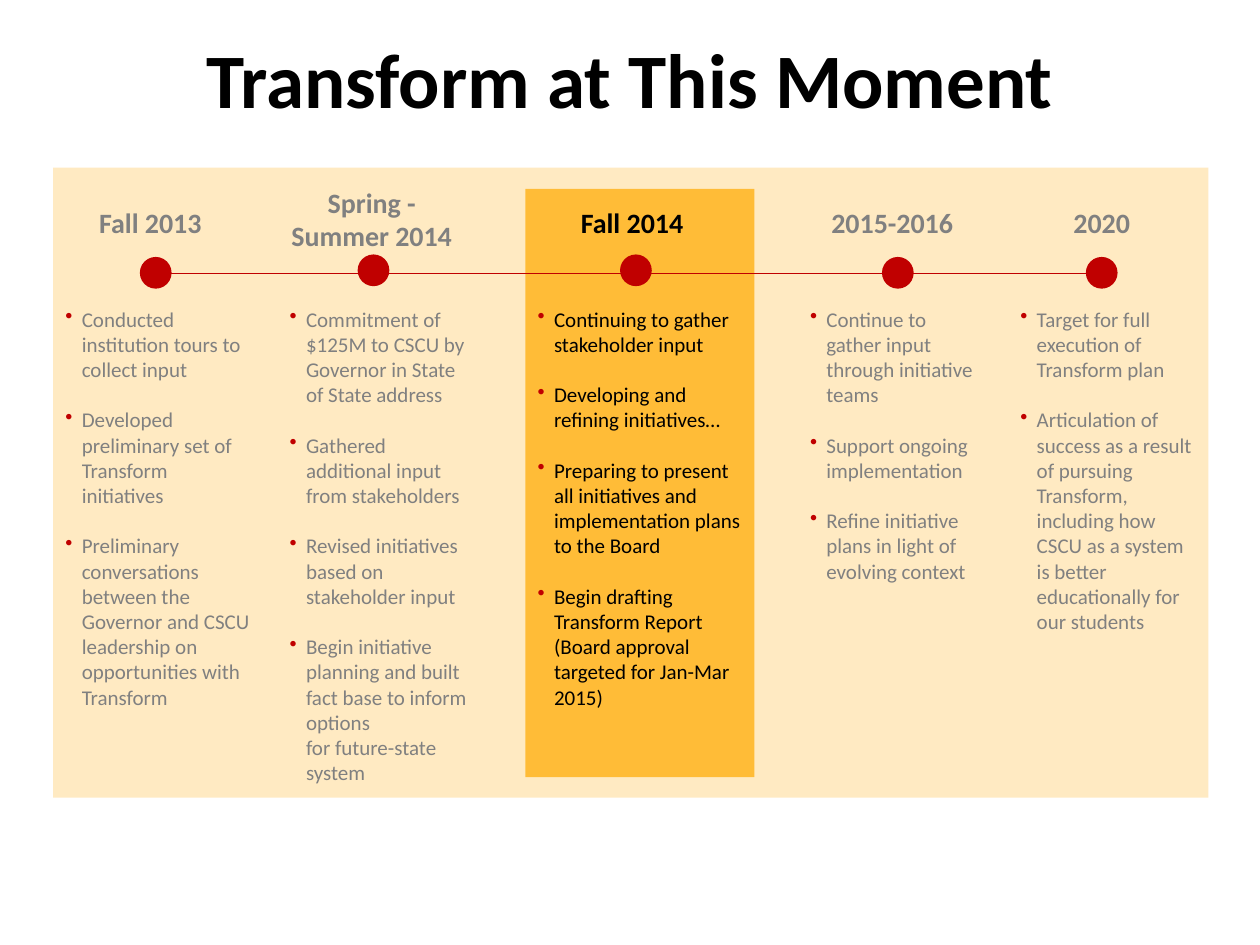
from lxml import etree
from pptx import Presentation
from pptx.dml.color import RGBColor
from pptx.enum import shapes, text
from pptx.oxml import ns
from pptx.util import Cm, Pt

RED, AMBER, GREY, BLACK = "C00000", "FFBC37", "808080", "000000"
LEFT, CENTER = text.PP_ALIGN.LEFT, text.PP_ALIGN.CENTER
HANGING = Cm(0.33)


def add_filled(kind, left, top, width, height, color):
    shape = page.shapes.add_shape(kind, Cm(left), Cm(top), Cm(width), Cm(height))
    shape.shadow.inherit = False
    shape.fill.solid()
    shape.fill.fore_color.rgb = RGBColor.from_string(color)
    shape.line.fill.background()
    return shape


def add_text(left, top, width, height, lines, size, color, bold, align, inset=None):
    box = page.shapes.add_textbox(Cm(left), Cm(top), Cm(width), Cm(height))
    frame = box.text_frame
    frame.word_wrap = True
    if inset is not None:
        frame.margin_left = frame.margin_right = Cm(inset)
        frame.margin_top = frame.margin_bottom = Cm(inset)
    for index, line in enumerate(lines):
        para = frame.add_paragraph() if index else frame.paragraphs[0]
        para.text = line
        para.alignment = align
        for span in para.runs:
            span.font.name = "Calibri"
            span.font.size = Pt(size)
            span.font.bold = bold
            span.font.color.rgb = RGBColor.from_string(color)
    return frame


deck = Presentation()
deck.slide_width, deck.slide_height = Cm(25.4), Cm(19.05)
page = deck.slides.add_slide(deck.slide_layouts[6])

panel = add_filled(shapes.MSO_SHAPE.RECTANGLE, 1.07, 3.38, 23.29, 12.7, AMBER)
panel_color = panel.fill._xPr.find(".//" + ns.qn("a:srgbClr"))
etree.SubElement(panel_color, ns.qn("a:alpha"), val="30000")
add_filled(shapes.MSO_SHAPE.RECTANGLE, 10.59, 3.81, 4.62, 11.86, AMBER)
add_text(0, 0.64, 25.4, 1.88, ["Transform at This Moment"], 44, BLACK, True, CENTER, 0)

timeline = page.shapes.add_connector(
    shapes.MSO_CONNECTOR.STRAIGHT, Cm(2.9), Cm(5.51), Cm(22.28), Cm(5.51))
timeline.line.color.rgb = RGBColor.from_string(RED)
timeline.line.width = Pt(0.75)
etree.SubElement(timeline._element.spPr, ns.qn("a:effectLst"))

# heading, (left, top, width), alignment, (dot left, dot top), (body left, width), color, points
stages = [
    ("Fall 2013", (1.75, 4.01, 2.74), LEFT, (2.82, 5.18), (1.07, 4.24), GREY, [
        "Conducted institution tours to collect input",
        "Developed preliminary set of Transform initiatives",
        "Preliminary conversations between the Governor and CSCU leadership "
        "on opportunities with Transform"]),
    ("Spring - Summer 2014", (5.59, 3.61, 3.81), CENTER, (7.21, 5.13), (5.59, 4.14), GREY, [
        "Commitment of $125M to CSCU by Governor in State of State address",
        "Gathered additional input from stakeholders",
        "Revised initiatives based on stakeholder input",
        "Begin initiative planning and built fact base to inform options\n"
        "for future-state system"]),
    ("Fall 2014", (11.46, 4.01, 2.74), LEFT, (12.5, 5.13), (10.59, 4.62), BLACK, [
        "Continuing to gather stakeholder input",
        "Developing and refining initiatives…",
        "Preparing to present all initiatives and implementation plans to the Board",
        "Begin drafting Transform Report (Board approval targeted for Jan-Mar 2015)"]),
    ("2015-2016", (16.51, 4.01, 3.18), LEFT, (17.78, 5.18), (16.08, 4.04), GREY, [
        "Continue to gather input through initiative teams",
        "Support ongoing implementation",
        "Refine initiative plans in light of evolving context"]),
    ("2020", (20.62, 4.01, 3.18), CENTER, (21.89, 5.18), (20.32, 4.01), GREY, [
        "Target for full execution of Transform plan",
        "Articulation of success as a result of pursuing Transform, including how "
        "CSCU as a system is better educationally for our students"]),
]

for heading, heading_place, align, dot_place, (left, width), color, points in stages:
    add_filled(shapes.MSO_SHAPE.OVAL, *dot_place, 0.64, 0.64, RED)
    add_text(*heading_place, 0.84, [heading], 16, color, True, align)
    body = add_text(left, 5.92, width, 9.86, points, 12, color, False, LEFT, 0.25)
    for index, para in enumerate(body.paragraphs):
        if index:
            para.space_before = Pt(14.4)
        properties = para._p.get_or_add_pPr()
        properties.set("marL", str(HANGING))
        properties.set("indent", str(-HANGING))
        bullet_color = etree.SubElement(properties, ns.qn("a:buClr"))
        etree.SubElement(bullet_color, ns.qn("a:srgbClr"), val=RED)
        etree.SubElement(properties, ns.qn("a:buChar"), char="•")

deck.save("out.pptx")
